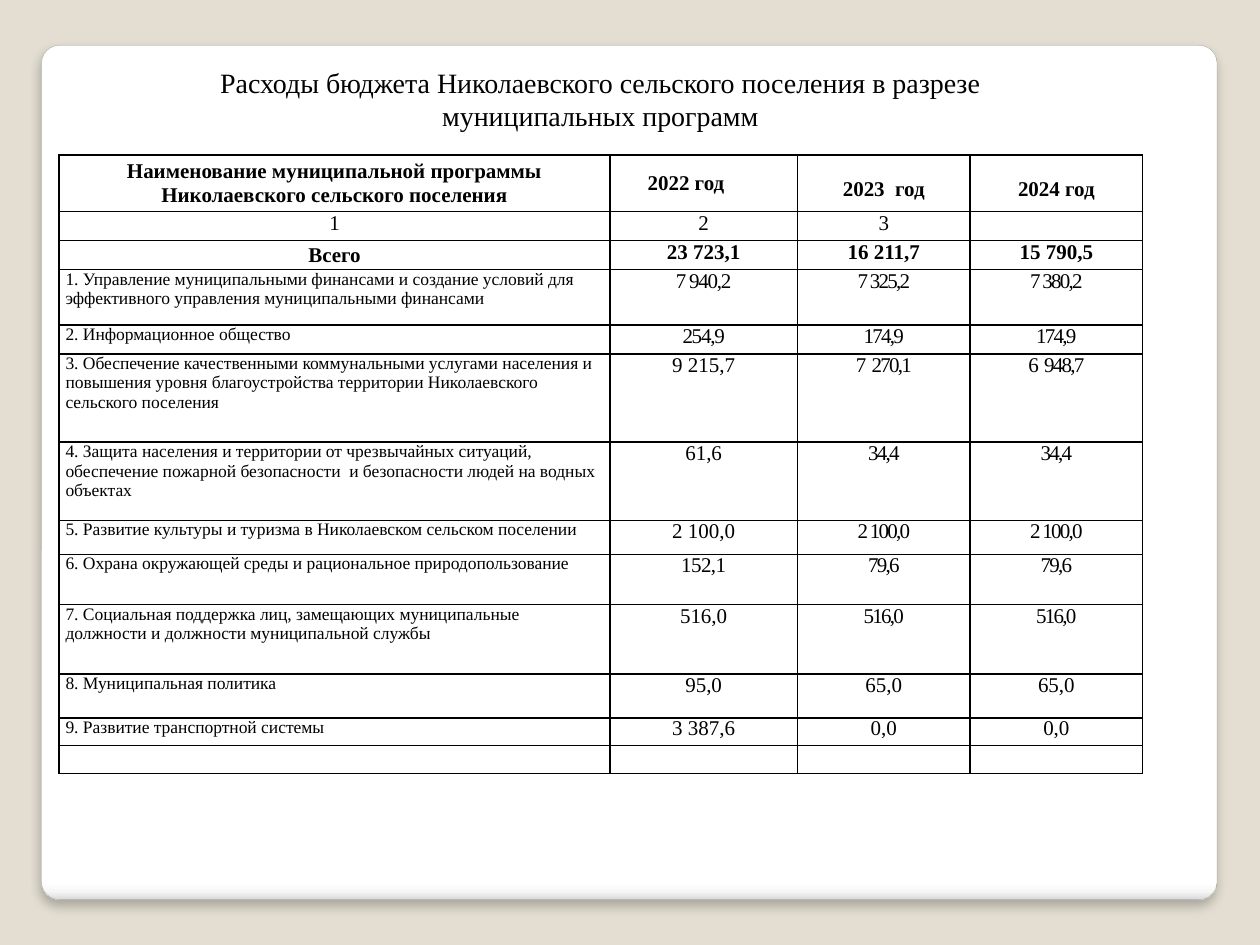
from dataclasses import dataclass

from lxml.etree import SubElement
from pptx import Presentation
from pptx.dml.color import RGBColor
from pptx.enum.shapes import MSO_SHAPE as Shape
from pptx.enum.text import MSO_ANCHOR as Anchor, PP_ALIGN as Align
from pptx.oxml.ns import qn
from pptx.util import Inches, Pt


@dataclass(frozen=True)
class Theme:
    font: str = "Times New Roman"
    ink: str = "000000"
    backdrop: str = "E3DED1"
    panel_line: str = "A4A4A4"
    panel_stops: tuple = ((0, "FFFFFF"), (98, "FFFFFF"), (99, "F7F7F7"), (100, "DADADA"))
    title: int = 16
    body: int = 12
    program: int = 10


THEME = Theme()

COLUMN_WIDTHS = (4.37, 1.49, 1.37, 1.37)
HEADINGS = ("Наименование муниципальной программы Николаевского сельского поселения",
            "2022 год", "2023  год", "2024 год")
NUMBERING = ("1", "2", "3", "")
TOTALS = ("Всего", "23 723,1", "16 211,7", "15 790,5")
HEAD_HEIGHTS = (0.45, 0.23, 0.23)
BLANK_HEIGHT = 0.22

# Row height, program, amounts for three years, letter spacing of 2022 and of later years
PROGRAMS = (
    (0.44, "1. Управление муниципальными финансами и создание условий для "
           "эффективного управления муниципальными финансами",
     ("7 940,2", "7 325,2", "7 380,2"), -0.7, -1),
    (0.23, "2. Информационное общество", ("254,9", "174,9", "174,9"), -0.7, -1),
    (0.7, "3. Обеспечение качественными коммунальными услугами населения и "
          "повышения уровня благоустройства территории Николаевского сельского поселения",
     ("9 215,7", "7  270,1", "6  948,7"), 0, -1),
    (0.62, "4. Защита населения и территории от чрезвычайных ситуаций, обеспечение "
           "пожарной безопасности  и безопасности людей на водных объектах",
     ("61,6", "34,4", "34,4"), 0, -1),
    (0.27, "5. Развитие культуры и туризма в Николаевском сельском поселении",
     ("2 100,0", "2 100,0", "2 100,0"), 0, -1),
    (0.4, "6. Охрана окружающей среды и рациональное природопользование",
     ("152,1", "79,6", "79,6"), -0.3, -1),
    (0.55, "7. Социальная поддержка лиц, замещающих муниципальные "
           "должности и должности муниципальной службы",
     ("516,0", "516,0", "516,0"), 0, -1),
    (0.35, "8. Муниципальная политика", ("95,0", "65,0", "65,0"), 0, 0),
    (0.22, "9. Развитие транспортной системы", ("3 387,6", "0,0", "0,0"), 0, 0),
)


def color(value):
    return RGBColor.from_string(value)


def write(paragraph, text, size, bold=False, align=Align.CENTER, tracking=0):
    paragraph.alignment = align
    if not text:
        SubElement(paragraph._p, qn("a:endParaRPr"), sz=str(size * 100))
        return
    run = paragraph.add_run()
    run.text = text
    run.font.name = THEME.font
    run.font.size = Pt(size)
    run.font.bold = bold
    run.font.color.rgb = color(THEME.ink)
    if tracking:
        run._r.get_or_add_rPr().set("spc", str(round(tracking * 100)))


def add_color(parent, value):
    return SubElement(parent, qn("a:srgbClr"), val=value)


def draw_panel(slide, left, top, width, height):
    panel = slide.shapes.add_shape(Shape.ROUNDED_RECTANGLE, left, top, width, height)
    panel.adjustments[0] = 0.021
    panel.line.color.rgb = color(THEME.panel_line)
    panel.line.width = Pt(0.16)

    # White face with a darker lower edge
    panel.fill.gradient()
    panel.fill.gradient_angle = 270
    stops = panel._element.spPr.find(".//" + qn("a:gsLst"))
    for stop in list(stops):
        stops.remove(stop)
    for percent, value in THEME.panel_stops:
        add_color(SubElement(stops, qn("a:gs"), pos=str(percent * 1000)), value)

    # Soft shadow below
    panel.shadow.inherit = False
    effects = panel._element.spPr.find(qn("a:effectLst"))
    shadow = SubElement(effects, qn("a:outerShdw"), blurRad=str(Pt(6)), dist=str(Pt(4)),
                        dir="5400000", algn="t", rotWithShape="0")
    SubElement(add_color(shadow, THEME.ink), qn("a:alpha"), val="25000")


def draw_title(slide, left, top, width, height):
    frame = slide.shapes.add_textbox(left, top, width, height).text_frame
    frame.word_wrap = True
    write(frame.paragraphs[0],
          "Расходы бюджета Николаевского сельского поселения в разрезе муниципальных программ",
          THEME.title)


def format_cell(cell):
    cell.margin_left = cell.margin_right = Inches(0.05)
    cell.margin_top = cell.margin_bottom = 0
    properties = cell._tc.get_or_add_tcPr()
    for side in ("lnL", "lnR", "lnT", "lnB"):
        border = SubElement(properties, qn("a:" + side), w=str(Pt(1)))
        add_color(SubElement(border, qn("a:solidFill")), THEME.ink)
    cell.fill.background()


def draw_expenses(slide, left, top, width):
    heights = (*HEAD_HEIGHTS, *(program[0] for program in PROGRAMS), BLANK_HEIGHT)
    table = slide.shapes.add_table(len(heights), len(COLUMN_WIDTHS), left, top, width,
                                   Inches(sum(heights))).table
    table.first_row = table.horz_banding = False
    for column, share in zip(table.columns, COLUMN_WIDTHS):
        column.width = int(width * share / sum(COLUMN_WIDTHS))
    for row, height in zip(table.rows, heights):
        row.height = Inches(height)
    for cell in table.iter_cells():
        format_cell(cell)

    def fill_row(index, texts, bold=False):
        for column, text in enumerate(texts):
            write(table.cell(index, column).text_frame.paragraphs[0], text, THEME.body, bold)

    # Headings, column numbers and totals
    fill_row(0, HEADINGS, bold=True)
    fill_row(1, NUMBERING)
    fill_row(2, TOTALS, bold=True)
    for row, column in ((0, 0), (0, 1), (2, 0)):
        table.cell(row, column).vertical_anchor = Anchor.MIDDLE
    for column in (2, 3):
        table.cell(0, column).margin_top = Inches(0.18)
    first_year = table.cell(0, 1)
    first_year.margin_left = Inches(0.3)
    first_year.text_frame.paragraphs[0].alignment = Align.LEFT

    # Programs
    for index, (_, name, amounts, first, later) in enumerate(PROGRAMS, len(HEAD_HEIGHTS)):
        write(table.cell(index, 0).text_frame.paragraphs[0], name, THEME.program,
              align=Align.LEFT)
        for column, (amount, tracking) in enumerate(zip(amounts, (first, later, later)), 1):
            paragraph = table.cell(index, column).text_frame.paragraphs[0]
            write(paragraph, amount, THEME.body, tracking=tracking)
            if index == len(heights) - 2:
                paragraph.line_spacing = 0.95

    # Closing empty row
    fill_row(len(heights) - 1, [""] * len(COLUMN_WIDTHS))


def main():
    deck = Presentation()
    deck.slide_width, deck.slide_height = Inches(10), Inches(7.5)
    slide = deck.slides.add_slide(deck.slide_layouts[6])
    slide.background.fill.solid()
    slide.background.fill.fore_color.rgb = color(THEME.backdrop)
    draw_panel(slide, Inches(0.33), Inches(0.36), Inches(9.33), Inches(6.78))
    draw_expenses(slide, Inches(0.47), Inches(1.23), Inches(8.6))
    draw_title(slide, Inches(0.86), Inches(0.47), Inches(7.81), Inches(0.64))
    deck.save("out.pptx")


if __name__ == "__main__":
    main()
